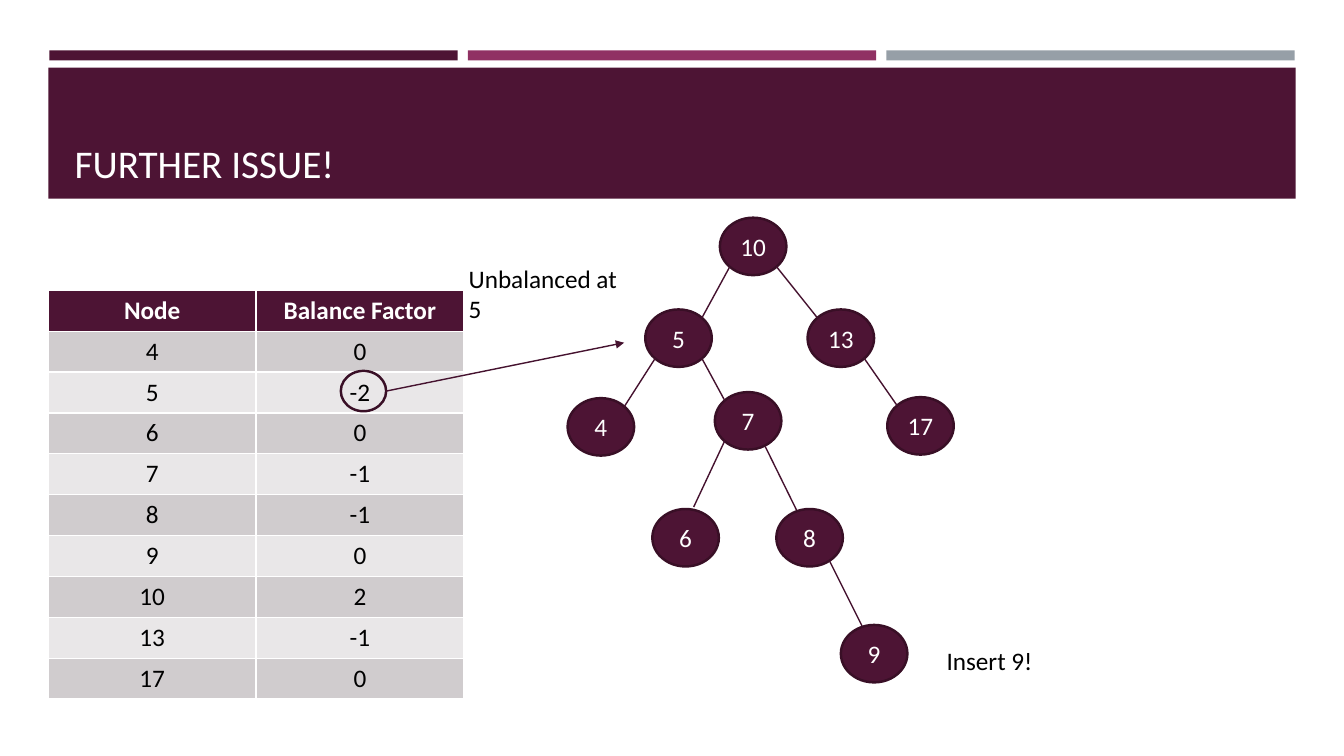
from dataclasses import dataclass

from pptx import Presentation
from pptx.dml.color import RGBColor
from pptx.enum.shapes import MSO_CONNECTOR as Connector, MSO_SHAPE as Shape
from pptx.enum.text import MSO_ANCHOR as Anchor, MSO_AUTO_SIZE as AutoSize, PP_ALIGN as Align
from pptx.oxml.ns import qn
from pptx.util import Pt
from lxml.etree import SubElement

PX = 9144  # 100 px to the inch


@dataclass(frozen=True)
class Theme:
    font: str = "Calibri"
    title: int = 28
    body: int = 18
    plum: str = "4D1434"
    magenta: str = "903163"
    grey: str = "969FA7"
    outline: str = "390F26"
    edge: str = "45122F"
    odd_row: str = "D0CCCE"
    even_row: str = "E9E7E8"
    white: str = "FFFFFF"
    black: str = "000000"


theme = Theme()


def write(tf, text, color, size=theme.body, align=Align.LEFT, bold=False):
    tf.text = text
    p = tf.paragraphs[0]
    p.alignment = align
    font = p.runs[0].font
    font.name, font.size, font.bold = theme.font, Pt(size), bold
    font.color.rgb = RGBColor.from_string(color)


def add_line(x1, y1, x2, y2):
    line = s.shapes.add_connector(Connector.STRAIGHT, *[round(v * PX) for v in (x1, y1, x2, y2)])
    line.line.color.rgb = RGBColor.from_string(theme.edge)
    line.line.width = Pt(1)
    SubElement(line._element.spPr, qn("a:effectLst"))
    return line


prs = Presentation()
prs.slide_width, prs.slide_height = 1333 * PX, 750 * PX
s = prs.slides.add_slide(prs.slide_layouts[5])

# Header bands, with the title in front of them
bands = [
    (49, 50, 405, 10, theme.plum),
    (464, 50, 405, 10, theme.magenta),
    (879, 50, 405, 10, theme.grey),
    (48, 67, 1237, 130, theme.plum),
]
for *box, color in bands:
    band = s.shapes.add_shape(Shape.RECTANGLE, *[v * PX for v in box])
    band.shadow.inherit = False
    band.fill.solid()
    band.fill.fore_color.rgb = RGBColor.from_string(color)
    band.line.fill.background()

title = s.shapes.title
s.shapes._spTree.append(title._element)
title.left, title.top, title.width, title.height = [v * PX for v in (64, 79, 1206, 111)]
tf = title.text_frame
tf.auto_size = AutoSize.NONE
tf.vertical_anchor = Anchor.BOTTOM
write(tf, "FURTHER ISSUE!", theme.white, theme.title)

# Balance factors
rows = [("Node", "Balance Factor"), ("4", "0"), ("5", "-2"), ("6", "0"), ("7", "-1"),
        ("8", "-1"), ("9", "0"), ("10", "2"), ("13", "-1"), ("17", "0")]
table = s.shapes.add_table(len(rows), 2, 48 * PX, 288 * PX, 412 * PX, len(rows) * 40 * PX).table
for i, row in enumerate(rows):
    header = i == 0
    fill = theme.plum if header else theme.odd_row if i % 2 else theme.even_row
    for j, value in enumerate(row):
        cell = table.cell(i, j)
        cell.fill.solid()
        cell.fill.fore_color.rgb = RGBColor.from_string(fill)
        write(cell.text_frame, value, theme.white if header else theme.black,
              align=Align.CENTER, bold=header)

# Tree nodes: left and top by key
NODE_W, NODE_H = 66, 57
nodes = {10: (714, 216), 5: (640, 307), 13: (801, 307), 4: (563, 395), 7: (709, 389),
         17: (880, 394), 6: (647, 505), 8: (770, 505), 9: (834, 620)}
for key, (x, y) in nodes.items():
    node = s.shapes.add_shape(Shape.OVAL, x * PX, y * PX, NODE_W * PX, NODE_H * PX)
    node.shadow.inherit = False
    node.fill.solid()
    node.fill.fore_color.rgb = RGBColor.from_string(theme.plum)
    node.line.color.rgb = RGBColor.from_string(theme.outline)
    node.line.width = Pt(1.75)
    tf = node.text_frame
    tf.margin_left = tf.margin_right = 0
    tf.vertical_anchor = Anchor.MIDDLE
    write(tf, str(key), theme.white, align=Align.CENTER)

# Edges run between the diagonal points of the ovals
DX, DY = NODE_W * 0.35, NODE_H * 0.35
for parent, child in [(10, 5), (10, 13), (5, 4), (5, 7), (13, 17)]:
    (px, py), (cx, cy) = [(x + NODE_W / 2, y + NODE_H / 2)
                          for x, y in (nodes[parent], nodes[child])]
    # Only the edge from 5 to 4 and the like lean left
    side = 1 if cx > px else -1
    add_line(px + side * DX, py + DY, cx - side * DX, cy - DY)

# The lower edges are steeper and meet the ovals nearer the top
for ends in [(719, 437, 688, 503), (759, 443, 790, 506), (823, 557, 855, 621)]:
    add_line(*ends)

# Mark the unbalanced node
ring = s.shapes.add_shape(Shape.OVAL, 338 * PX, 368 * PX, 45 * PX, 40 * PX)
ring.shadow.inherit = False
ring.fill.background()
ring.line.color.rgb = RGBColor.from_string(theme.outline)
ring.line.width = Pt(1.75)
arrow = add_line(383, 388, 619, 340)
SubElement(arrow.line._get_or_add_ln(), qn("a:tailEnd"), type="triangle")

for text, x, y, width, wrap in [("Unbalanced at 5", 455, 256, 180, True),
                                ("Insert 9!", 929, 635, 106, False)]:
    tf = s.shapes.add_textbox(x * PX, y * PX, width * PX, 40 * PX).text_frame
    tf.word_wrap = wrap
    write(tf, text, theme.black)

prs.save("out.pptx")
